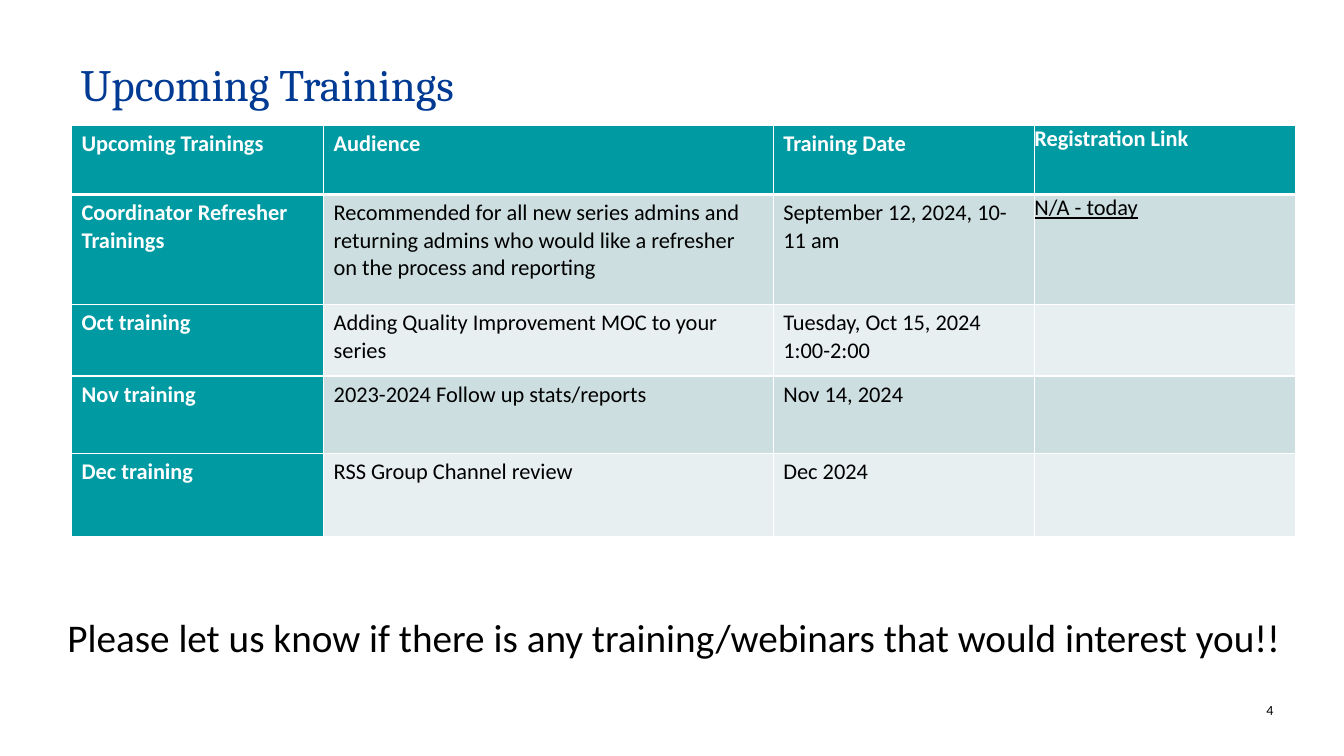
from lxml import etree
from pptx import Presentation
from pptx.dml.color import RGBColor
from pptx.enum.text import MSO_ANCHOR as Anchor, MSO_AUTO_SIZE as AutoSize, PP_ALIGN as Align
from pptx.oxml.ns import qn
from pptx.util import Inches, Pt

TEAL, NAVY, WHITE, BLACK = "009AA3", "003A93", "FFFFFF", "000000"
BANDS = ("CCDEE0", "E7EFF0")
NO_MARGINS = dict.fromkeys(("margin_left", "margin_top", "margin_right", "margin_bottom"), 0)
COLUMN_WIDTHS = (2.5, 4.46, 2.59, 2.59)
ROW_HEIGHTS = (0.69, 1.09, 0.71, 0.77, 0.82)
TRAININGS = (
    ("Upcoming Trainings", "Audience", "Training Date", "Registration Link"),
    ("Coordinator Refresher Trainings",
     "Recommended for all new series admins and returning admins "
     "who would like a refresher on the process and reporting",
     "September 12, 2024, 10-11 am", "N/A - today"),
    ("Oct training", "Adding Quality Improvement MOC to your series",
     "Tuesday, Oct 15, 2024 1:00-2:00", ""),
    ("Nov training", "2023-2024 Follow up stats/reports", "Nov 14, 2024", ""),
    ("Dec training", "RSS Group Channel review", "Dec 2024", ""),
)


def rgb(value):
    return RGBColor.from_string(value)


def apply_format(target, values):
    for name, value in values.items():
        setattr(target, name, value)


def write(frame, text, color, **font_values):
    paragraph = frame.paragraphs[0]
    run = paragraph.add_run()
    run.text = text
    apply_format(run.font, {"name": "Calibri", **font_values})
    run.font.color.rgb = rgb(color)
    return paragraph


def set_borders(cell, widths):
    properties = cell._tc.get_or_add_tcPr()
    for side, width in zip("LRTB", widths):
        line = etree.SubElement(properties, qn(f"a:ln{side}"), w=str(Pt(width)))
        fill = etree.SubElement(line, qn("a:solidFill"))
        etree.SubElement(fill, qn("a:srgbClr"), val=WHITE)


def add_title(slide, text, box):
    title = slide.shapes.title
    apply_format(title, dict(zip(("left", "top", "width", "height"), map(Inches, box))))
    apply_format(title.text_frame, {"word_wrap": True, "auto_size": AutoSize.NONE,
                                    "vertical_anchor": Anchor.TOP})
    paragraph = write(title.text_frame, text, NAVY, name="Cambria", size=Pt(32))
    apply_format(paragraph, {"alignment": Align.LEFT, "line_spacing": 0.9})


def fill_cell(cell, text, row, column):
    is_heading = row == 0 or column == 0
    # The rule under the header row is thicker than the others
    set_borders(cell, (1, 1, 3 if row == 1 else 1, 3 if row == 0 else 1))
    cell.fill.solid()
    cell.fill.fore_color.rgb = rgb(TEAL if is_heading else BANDS[(row - 1) % 2])
    if column == 3:
        apply_format(cell, NO_MARGINS)
    if text:
        write(cell.text_frame, text, WHITE if is_heading else BLACK, size=Pt(16),
              bold=is_heading, underline=column == 3 and row > 0)


def add_training_table(slide, box):
    schedule = slide.shapes.add_table(
        len(ROW_HEIGHTS), len(COLUMN_WIDTHS), *map(Inches, box)).table
    for column, width in zip(schedule.columns, COLUMN_WIDTHS):
        column.width = Inches(width)
    for row, height in zip(schedule.rows, ROW_HEIGHTS):
        row.height = Inches(height)
    for row, training in enumerate(TRAININGS):
        for column, text in enumerate(training):
            fill_cell(schedule.cell(row, column), text, row, column)


def add_note(slide, text, box, size, align=Align.LEFT, frame_values=None):
    frame = slide.shapes.add_textbox(*map(Inches, box)).text_frame
    apply_format(frame, {"word_wrap": True, **(frame_values or {})})
    write(frame, text, BLACK, size=Pt(size)).alignment = align


def main():
    deck = Presentation()
    apply_format(deck, {"slide_width": Inches(13.33), "slide_height": Inches(7.5)})
    slide = deck.slides.add_slide(deck.slide_layouts.get_by_name("Title Only"))

    # Heading and schedule
    add_title(slide, "Upcoming Trainings", (0.7, 0.57, 11.92, 1.05))
    add_training_table(slide, (0.71, 1.24, sum(COLUMN_WIDTHS), sum(ROW_HEIGHTS)))

    # Closing request and page number
    add_note(slide, "Please let us know if there is any training/webinars "
             "that would interest you!!", (0.57, 6.04, 12.51, 0.57), 28)
    add_note(slide, "4", (12.25, 6.96, 0.38, 0.17), 10, Align.RIGHT, NO_MARGINS)

    deck.save("out.pptx")


if __name__ == "__main__":
    main()
